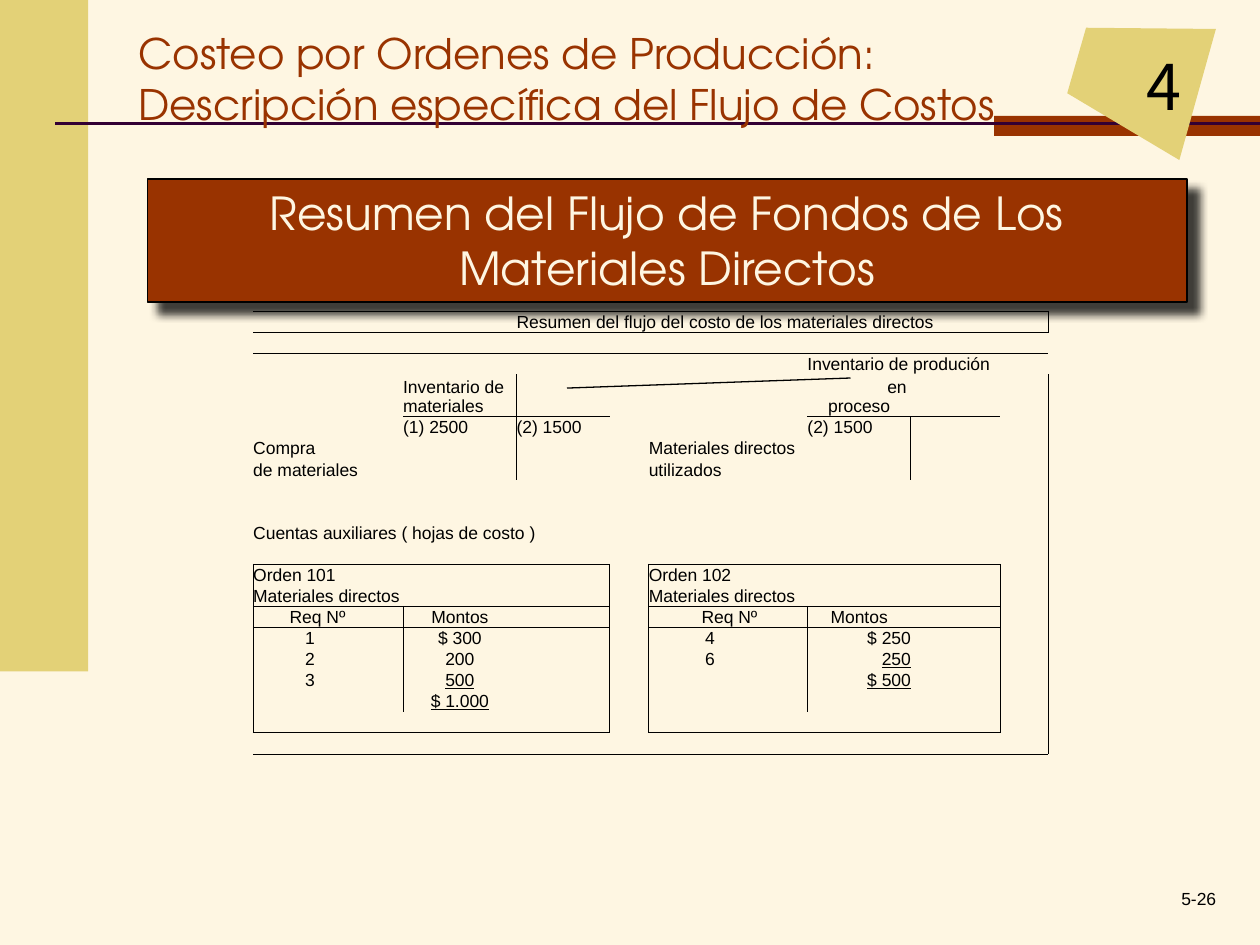
from lxml import etree
from pptx import Presentation, util as u
from pptx.dml.color import RGBColor
from pptx.enum import shapes, text
from pptx.oxml import parse_xml
from pptx.oxml.ns import qn

Inches, Pt = u.Inches, u.Pt
NS = 'xmlns:a="http://schemas.openxmlformats.org/drawingml/2006/main"'
BLACK, CREAM, RUST, SAND, PLUM = "000000", "FEF6E2", "993300", "E3D177", "330033"
TITLE_FONT = "TeX Gyre Adventor"
LEFT, CENTER, RIGHT = text.PP_ALIGN.LEFT, text.PP_ALIGN.CENTER, text.PP_ALIGN.RIGHT


def color(hex_value):
    return RGBColor.from_string(hex_value)


def write(frame, words, size=10, font="Arial", fill=BLACK, align=LEFT,
          underline=False, indent=0):
    frame.word_wrap = True
    paragraph = frame.paragraphs[0]
    paragraph.alignment = align
    if indent:
        paragraph._p.get_or_add_pPr().set("indent", str(Inches(indent)))
    run = paragraph.add_run()
    run.text = words
    run.font.size = Pt(size)
    run.font.name = font
    run.font.color.rgb = color(fill)
    if underline:
        run.font.underline = True


presentation = Presentation()
presentation.slide_width, presentation.slide_height = Inches(10), Inches(7.5)
slide = presentation.slides.add_slide(presentation.slide_layouts[6])
slide.background.fill.solid()
slide.background.fill.fore_color.rgb = color(CREAM)

# Side band, header bar and banner
rectangles = []
for left, top, width, height, fill in [
    (0, 0, 0.7, 5.33, SAND),
    (7.89, 0.92, 2.11, 0.16, RUST),
    (1.17, 1.42, 8.25, 0.98, RUST),
]:
    shape = slide.shapes.add_shape(
        shapes.MSO_SHAPE.RECTANGLE, Inches(left), Inches(top), Inches(width), Inches(height))
    shape.shadow.inherit = False
    shape.fill.solid()
    shape.fill.fore_color.rgb = color(fill)
    shape.line.fill.background()
    rectangles.append(shape)

banner = rectangles[-1]
banner.line.color.rgb = color(BLACK)
banner.line.width = Pt(1)
banner.text_frame.vertical_anchor = text.MSO_ANCHOR.TOP
write(banner.text_frame, "Resumen del Flujo de Fondos de Los Materiales Directos",
      size=26, font=TITLE_FONT, fill=CREAM, align=CENTER)
effects = banner._element.spPr.find(qn("a:effectLst"))
effects.append(parse_xml(
    f'<a:outerShdw {NS} blurRad="{Pt(5)}" dist="{Pt(8.5)}" dir="2700000" algn="tl" '
    f'rotWithShape="0"><a:srgbClr val="{BLACK}"><a:alpha val="75000"/></a:srgbClr></a:outerShdw>'))

# Header rule and the line that joins the two accounts
for x1, y1, x2, y2, stroke, weight in [
    (0.44, 0.98, 10, 0.98, PLUM, 1.5),
    (4.5, 3.08, 6.75, 3, BLACK, 0.75),
]:
    line = slide.shapes.add_connector(
        shapes.MSO_CONNECTOR.STRAIGHT, Inches(x1), Inches(y1), Inches(x2), Inches(y2))
    line.line.color.rgb = color(stroke)
    line.line.width = Pt(weight)
    etree.SubElement(line._element.spPr, qn("a:effectLst"))

# Chapter tag
builder = slide.shapes.build_freeform(Inches(9.65), Inches(0.23))
builder.add_line_segments(
    [(Inches(x), Inches(y)) for x, y in [(8.62, 0.22), (8.47, 0.74), (9.36, 1.27)]], close=True)
tag = builder.convert_to_shape()
tag.shadow.inherit = False
tag.fill.solid()
tag.fill.fore_color.rgb = color(SAND)
tag.line.fill.background()

# Title, chapter number and page number
for left, top, width, height, words, anchor, style in [
    (1, 0.33, 7.75, 0.58,
     "Costeo por Ordenes de Producción: Descripción específica del Flujo de Costos",
     text.MSO_ANCHOR.MIDDLE, dict(size=24, font=TITLE_FONT, fill=RUST)),
    (9, 0.33, 0.58, 0.7, "4", text.MSO_ANCHOR.TOP, dict(size=36, font="Noto Sans CJK KR")),
    (9, 7, 0.75, 0.17, "5-26", text.MSO_ANCHOR.TOP, dict(align=RIGHT)),
]:
    box = slide.shapes.add_textbox(Inches(left), Inches(top), Inches(width), Inches(height))
    box.text_frame.vertical_anchor = anchor
    write(box.text_frame, words, **style)

# Cost flow table: every row is one unit high, except the double account heading
ROWS, UNIT = 20, 3.5 / 21
column_widths = [0.9, 0.29, 0.9, 0.74, 0.31, 0.97, 0.29, 0.82, 0.71, 0.38]
COLUMNS = len(column_widths)
table = slide.shapes.add_table(
    ROWS, COLUMNS, Inches(2.01), Inches(2.47), Inches(6.31), Inches(3.5)).table
table.first_row = table.horz_banding = False
for column, width in zip(table.columns, column_widths):
    column.width = Inches(width)
for number, row in enumerate(table.rows):
    row.height = Inches(UNIT * 2 if number == 3 else UNIT)

# Cell text: row, column, words, columns spanned, format
middle, right, total = dict(align=CENTER), dict(align=RIGHT), dict(align=CENTER, underline=True)
right_total = dict(align=RIGHT, underline=True)
entries = [
    (0, 3, "Resumen del flujo del costo de los materiales directos", 6, {}),
    (2, 7, "Inventario de produción", 3, {}),
    (3, 2, "Inventario de materiales", 1, {}),
    (3, 7, "en proceso", 1, dict(align=CENTER, indent=0.6)),
    (4, 2, "(1) 2500", 1, {}),
    (4, 3, "(2) 1500", 1, {}),
    (4, 7, "(2) 1500", 1, {}),
    (5, 0, "Compra", 1, {}),
    (5, 5, "Materiales directos", 2, {}),
    (6, 0, "de materiales", 2, {}),
    (6, 5, "utilizados", 1, {}),
    (9, 0, "Cuentas auxiliares ( hojas de costo )", 4, {}),
    (11, 0, "Orden 101", 1, {}),
    (11, 5, "Orden 102", 1, {}),
    (12, 0, "Materiales directos", 3, {}),
    (12, 5, "Materiales directos", 2, {}),
    (13, 0, "Req Nº", 1, dict(align=CENTER, indent=0.12)),
    (13, 2, "Montos", 1, middle),
    (13, 5, "Req Nº", 1, dict(align=CENTER, indent=0.31)),
    (13, 7, "Montos", 1, middle),
    (14, 0, "1", 1, middle), (14, 2, "$ 300", 1, middle),
    (14, 5, "4", 1, middle), (14, 7, "$ 250", 1, right),
    (15, 0, "2", 1, middle), (15, 2, "200", 1, middle),
    (15, 5, "6", 1, middle), (15, 7, "250", 1, right_total),
    (16, 0, "3", 1, middle), (16, 2, "500", 1, total),
    (16, 7, "$ 500", 1, right_total),
    (17, 2, "$ 1.000", 1, total),
]
for row, column, words, span, style in entries:
    cell = table.cell(row, column)
    if span > 1:
        cell.merge(table.cell(row, column + span - 1))
    write(cell.text_frame, words, **style)

# Rules: grid line, first cell, end cell
edges = set()
horizontal = [(y, 0, COLUMNS) for y in (0, 1, 2, 20)] + [(4, 2, 4), (4, 7, 9)]
horizontal += [(y, x, x + 4) for y in (11, 13, 14, 19) for x in (0, 5)]
vertical = [(10, 0, 1), (10, 2, 20), (3, 3, 7), (8, 4, 7)]
vertical += [(x, 11, 19) for x in (0, 4, 5, 9)] + [(x, 13, 18) for x in (2, 7)]
for y, start, end in horizontal:
    for x in range(start, end):
        edges |= {(y, x, "T"), (y - 1, x, "B")}
for x, start, end in vertical:
    for y in range(start, end):
        edges |= {(y, x, "L"), (y, x - 1, "R")}

# Cell margins, borders and fill
for row in range(ROWS):
    for column in range(COLUMNS):
        cell = table.cell(row, column)
        cell.margin_left = cell.margin_right = cell.margin_top = cell.margin_bottom = 0
        cell.vertical_anchor = text.MSO_ANCHOR.BOTTOM
        cell.text_frame.paragraphs[0]._p.get_or_add_endParaRPr().set("sz", "1000")
        properties = cell._tc.get_or_add_tcPr()
        for side in "LRTB":
            paint = (f'<a:solidFill><a:srgbClr val="{BLACK}"/></a:solidFill>'
                     if (row, column, side) in edges else "<a:noFill/>")
            properties.append(parse_xml(f'<a:ln{side} {NS} w="{Pt(0.5)}">{paint}</a:ln{side}>'))
        cell.fill.background()

presentation.save("out.pptx")
